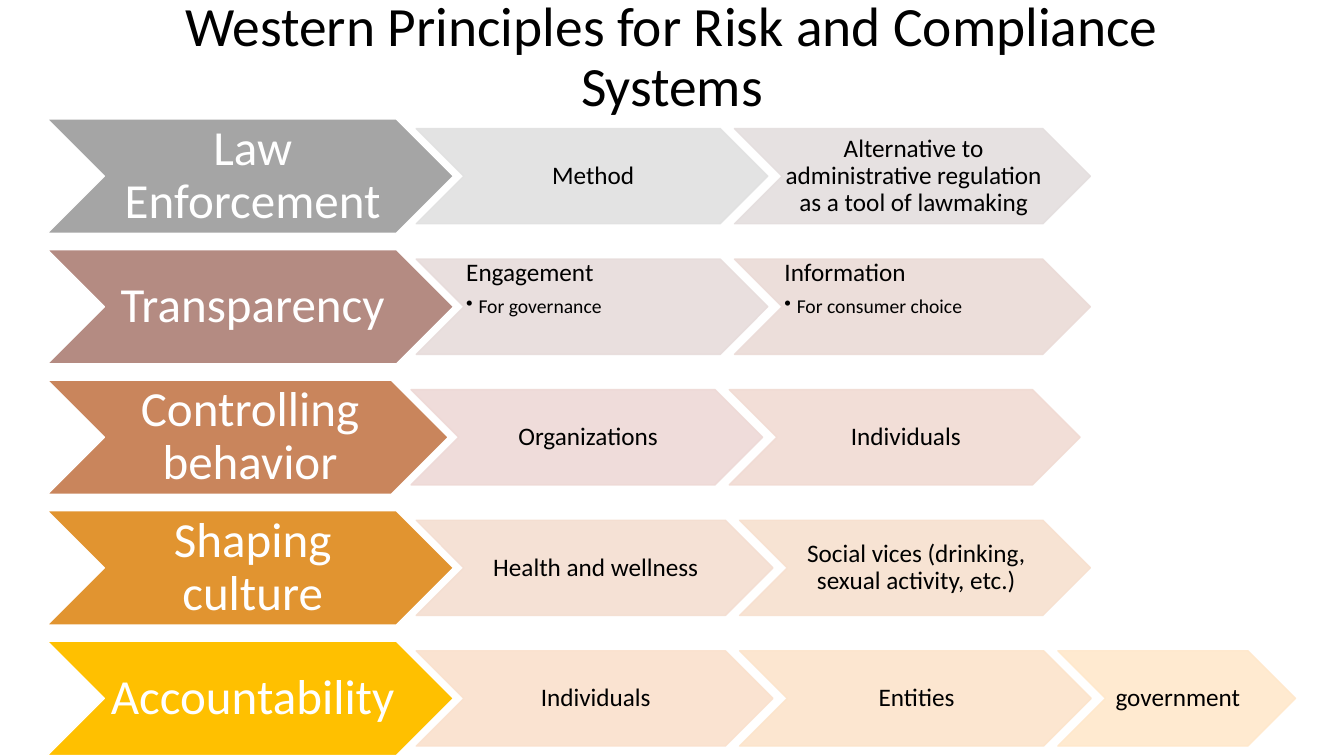
from dataclasses import dataclass

from lxml.etree import SubElement
from pptx import Presentation
from pptx.dml.color import RGBColor
from pptx.enum.shapes import MSO_SHAPE
from pptx.enum.text import MSO_ANCHOR, PP_ALIGN
from pptx.oxml.ns import qn
from pptx.util import Cm, Pt


@dataclass(frozen=True)
class Theme:
    font: str = "Calibri"
    dark: str = "000000"
    light: str = "FFFFFF"
    title_size: float = 39.6
    lead_size: float = 35
    step_size: float = 18
    bullet_size: float = 14
    line_spacing: float = 0.9
    step_opacity: int = 90


THEME = Theme()

# Lengths in cm
LEAD_H, STEP_H = 2.88, 2.4
ROW_PITCH = 3.29
LEAD_OVERLAP, STEP_OVERLAP = 0.94, 0.84
BULLET_INDENT = 0.31

# Each row: lead (text, width, colour), then steps (lines, width, colour)
ROWS = [
    (("Law Enforcement", 10.24, "A5A5A5"), [
        (["Method"], 8.86, "E1E1E1"),
        (["Alternative to administrative regulation as a tool of lawmaking"],
         8.97, "E4DEDE")]),
    (("Transparency", 10.24, "B48B82"), [
        (["Engagement", "For governance"], 8.86, "E7DCDB"),
        (["Information", "For consumer choice"], 8.97, "EBDBD7")]),
    (("Controlling behavior", 10.11, "C9855C"), [
        (["Organizations"], 8.86, "EED9D6"),
        (["Individuals"], 8.84, "F1DBD3")]),
    (("Shaping culture", 10.24, "E19430"), [
        (["Health and wellness"], 8.99, "F4DED1"),
        (["Social vices (drinking, sexual activity, etc.)"], 8.84, "F7E0CF")]),
    (("Accountability", 10.24, "FFC000"), [
        (["Individuals"], 8.99, "FAE1CD"),
        (["Entities"], 8.86, "FCE4CB"),
        (["government"], 5.99, "FFE8CB")]),
]


def add_run(p, text, size, color):
    p.line_spacing = THEME.line_spacing
    r = p.add_run()
    r.text = text
    r.font.name = THEME.font
    r.font.size = Pt(size)
    r.font.color.rgb = RGBColor.from_string(color)


def add_bullet(p):
    pPr = p._p.get_or_add_pPr()
    pPr.set("marL", str(Cm(BULLET_INDENT)))
    pPr.set("indent", str(-Cm(BULLET_INDENT)))
    SubElement(pPr, qn("a:buChar")).set("char", "•")


def set_opacity(color_format, percent):
    clr = color_format._xFill.find(qn("a:srgbClr"))
    SubElement(clr, qn("a:alpha")).set("val", str(percent * 1000))


def add_chevron(s, x, y, w, h, fill, line, inset):
    sp = s.shapes.add_shape(MSO_SHAPE.CHEVRON, Cm(x), Cm(y), Cm(w), Cm(h))
    sp.shadow.inherit = False
    sp.fill.solid()
    sp.fill.fore_color.rgb = RGBColor.from_string(fill)
    sp.line.color.rgb = RGBColor.from_string(line)
    sp.line.width = Pt(1)
    tf = sp.text_frame
    tf.word_wrap = True
    tf.vertical_anchor = MSO_ANCHOR.MIDDLE
    tf.margin_left, tf.margin_right = Cm(inset), 0
    tf.margin_top = tf.margin_bottom = Cm(inset / 2.5)
    return sp


def add_lead(s, x, y, text, w, color):
    sp = add_chevron(s, x, y, w, LEAD_H, color, THEME.light, 0.12)
    p = sp.text_frame.paragraphs[0]
    p.alignment = PP_ALIGN.CENTER
    add_run(p, text, THEME.lead_size, THEME.light)


def add_step(s, x, y, lines, w, color):
    sp = add_chevron(s, x, y, w, STEP_H, color, color, 0.06)
    for fill in sp._element.spPr.iter(qn("a:srgbClr")):
        SubElement(fill, qn("a:alpha")).set("val", str(THEME.step_opacity * 1000))
    tf = sp.text_frame
    heading, *bullets = lines
    p = tf.paragraphs[0]
    p.alignment = PP_ALIGN.LEFT if bullets else PP_ALIGN.CENTER
    add_run(p, heading, THEME.step_size, THEME.dark)
    if bullets:
        tf.vertical_anchor = MSO_ANCHOR.TOP
        p.space_after = Pt(0.35 * THEME.step_size)
    for text in bullets:
        p = tf.add_paragraph()
        add_bullet(p)
        p.level = 1
        p.alignment = PP_ALIGN.LEFT
        add_run(p, text, THEME.bullet_size, THEME.dark)


def add_row(s, x, y, lead, steps):
    text, w, color = lead
    add_lead(s, x, y, text, w, color)
    x += w - LEAD_OVERLAP
    for lines, w, color in steps:
        add_step(s, x, y + (LEAD_H - STEP_H) / 2, lines, w, color)
        x += w - STEP_OVERLAP


def add_title(s, x, y, w, h, text):
    tf = s.shapes.add_textbox(Cm(x), Cm(y), Cm(w), Cm(h)).text_frame
    tf.word_wrap = True
    tf.vertical_anchor = MSO_ANCHOR.MIDDLE
    p = tf.paragraphs[0]
    p.alignment = PP_ALIGN.CENTER
    add_run(p, text, THEME.title_size, THEME.dark)


def main():
    prs = Presentation()
    prs.slide_width, prs.slide_height = Cm(33.87), Cm(19.05)
    s = prs.slides.add_slide(prs.slide_layouts[6])

    # Title
    add_title(s, 2.33, 0, 29.21, 2.97,
              "Western Principles for Risk and Compliance Systems")

    # Chevron rows
    for i, (lead, steps) in enumerate(ROWS):
        add_row(s, 1.19, 3 + i * ROW_PITCH, lead, steps)

    prs.save("out.pptx")


if __name__ == "__main__":
    main()
